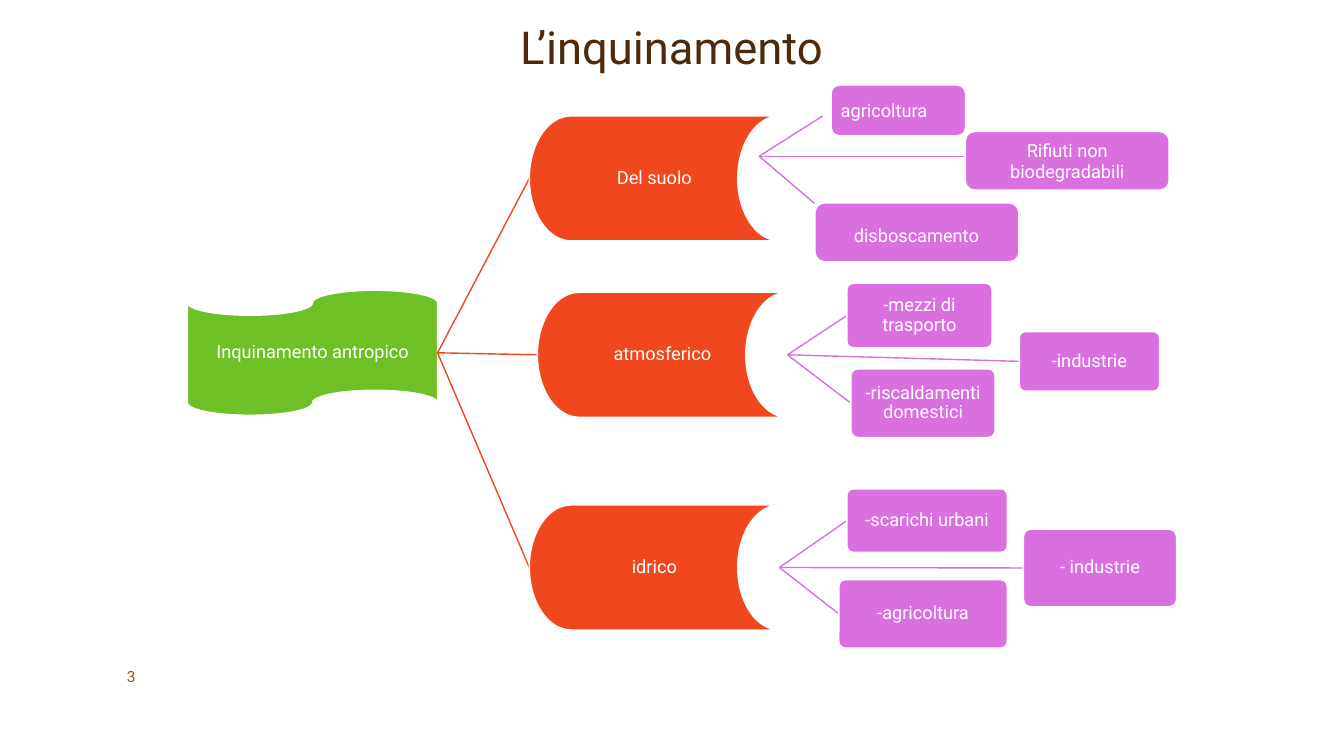
from pptx import Presentation, util as u
from pptx.dml.color import RGBColor
from pptx.enum import shapes, text
from pptx.oxml.ns import qn
from lxml import etree

GREEN, ORANGE, VIOLET, WHITE = "6DC025", "F1471F", "DA6FDF", "FFFFFF"
KIND = shapes.MSO_SHAPE
MIDDLE, BOTTOM = text.MSO_ANCHOR.MIDDLE, text.MSO_ANCHOR.BOTTOM
LEFT, CENTER = text.PP_ALIGN.LEFT, text.PP_ALIGN.CENTER
NARROW, WIDE = (0.01, 0.01), (0.1, 0.05)


def color(value):
    """Turn a hex string into a colour."""
    return RGBColor.from_string(value)


def assign(target, values):
    """Set every attribute named in a dict of format values."""
    for name, value in values.items():
        setattr(target, name, value)


class ConceptMap:
    """Hold the style and the current slide, and draw the map's elements."""

    font_name = "Roboto"

    def __init__(self, presentation):
        """Start on a new blank slide."""
        self.slide = presentation.slides.add_slide(presentation.slide_layouts[6])

    def fill_text(self, shape, words, size=13, ink=WHITE, align=CENTER, anchor=MIDDLE,
                  margins=WIDE, spacing=1.0):
        """Put one formatted paragraph into a shape."""
        side, edge = (u.Inches(margin) for margin in margins)
        assign(shape.text_frame, {
            "word_wrap": True, "vertical_anchor": anchor,
            "margin_left": side, "margin_right": side,
            "margin_top": edge, "margin_bottom": edge})
        paragraph = shape.text_frame.paragraphs[0]
        paragraph.text = words
        assign(paragraph, {"alignment": align, "line_spacing": spacing})
        assign(paragraph.font, {"name": self.font_name, "size": u.Pt(size)})
        paragraph.font.color.rgb = color(ink)

    def label(self, box, words, **style):
        """Add free-standing text."""
        shape = self.slide.shapes.add_textbox(*map(u.Inches, box))
        self.fill_text(shape, words, **style)

    def node(self, kind, box, fill, words="", outline=1, corner=None, **style):
        """Add a filled shape with a white outline and optional text."""
        shape = self.slide.shapes.add_shape(kind, *map(u.Inches, box))
        shape.shadow.inherit = False
        shape.fill.solid()
        shape.fill.fore_color.rgb = color(fill)
        shape.line.color.rgb = color(WHITE)
        shape.line.width = u.Pt(outline)
        if corner is not None:
            shape.adjustments[0] = corner
        if words:
            self.fill_text(shape, words, **style)

    def link(self, start, end, ink):
        """Join two points with a thin straight line."""
        connector = self.slide.shapes.add_connector(
            shapes.MSO_CONNECTOR.STRAIGHT, *map(u.Inches, start + end))
        connector.line.color.rgb = color(ink)
        connector.line.width = u.Pt(1)
        etree.SubElement(connector._element.spPr, qn("a:effectLst"))


def main():
    """Build the pollution map and save it."""
    presentation = Presentation()
    assign(presentation, {"slide_width": u.Inches(13.33), "slide_height": u.Inches(7.5)})
    concept_map = ConceptMap(presentation)
    compact = {"margins": NARROW, "spacing": 0.9}

    concept_map.label((2.55, 0.2, 8.22, 0.59), "L’inquinamento", size=32.4,
                      ink="4D2A0B", anchor=BOTTOM, spacing=0.9)

    root = (4.34, 3.5)
    concept_map.node(KIND.FLOWCHART_PUNCHED_TAPE, (1.86, 2.88, 2.48, 1.24), GREEN,
                     "Inquinamento antropico", **compact)

    branches = [
        ("Del suolo", 5.25, 1.15, []),
        ("atmosferico", 5.33, 2.9, [
            ("-mezzi di trasporto", (8.4, 2.81, 1.44, 0.64)),
            ("-industrie", (10.11, 3.29, 1.39, 0.59)),
            ("-riscaldamenti domestici", (8.44, 3.66, 1.43, 0.68))]),
        ("idrico", 5.25, 5.01, [
            ("-scarichi urbani", (8.4, 4.85, 1.59, 0.63)),
            ("- industrie", (10.15, 5.25, 1.52, 0.77)),
            ("-agricoltura", (8.32, 5.75, 1.67, 0.68))]),
    ]
    for name, left, top, causes in branches:
        middle = top + 0.62
        concept_map.link(root, (left, middle), ORANGE)
        concept_map.node(KIND.FLOWCHART_STORED_DATA, (left, top, 2.48, 1.24), ORANGE,
                         name, **compact)
        for cause, box in causes:
            concept_map.link((left + 2.48, middle), (box[0], box[1] + box[3] / 2), VIOLET)
            concept_map.node(KIND.ROUNDED_RECTANGLE, box, VIOLET, cause,
                             corner=0.1, **compact)

    concept_map.label((1.16, 6.58, 0.83, 0.25), "3", size=11, ink="9A5315", align=LEFT)

    for end in ((8.16, 1.15), (9.56, 1.55), (8.08, 2.02)):
        concept_map.link((7.53, 1.55), end, VIOLET)
    soil_causes = [
        ((8.24, 0.84, 1.34, 0.51), ""),
        ((9.57, 1.3, 2.03, 0.59), "Rifiuti non biodegradabili"),
        ((8.08, 2.01, 2.03, 0.59), ""),
    ]
    for box, cause in soil_causes:
        concept_map.node(KIND.ROUNDED_RECTANGLE, box, VIOLET, cause, outline=1.5)
    concept_map.label((8.24, 0.93, 1.64, 0.32), "agricoltura", align=LEFT)
    concept_map.label((8.37, 2.17, 2.42, 0.32), "disboscamento", align=LEFT)

    presentation.save("out.pptx")


if __name__ == "__main__":
    main()
